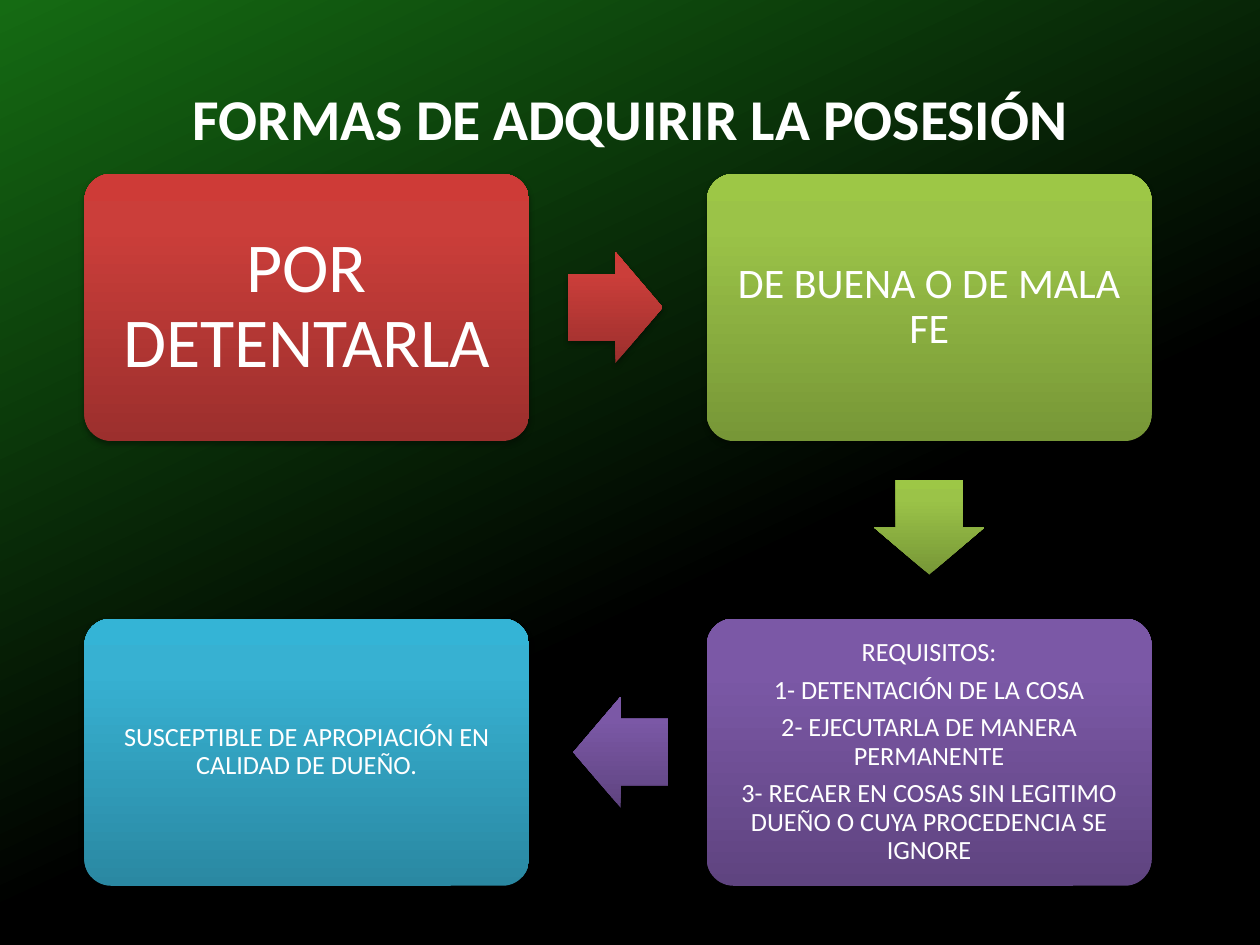
from lxml import etree
from pptx import Presentation
from pptx import util as u
from pptx.dml.color import RGBColor
from pptx.enum import shapes, text
from pptx.oxml import parse_xml
from pptx.oxml.ns import nsdecls, qn

TITLE = "FORMAS DE ADQUIRIR LA POSESIÓN"
STEPS = [
    ("red", 0, 0, 40, 0.17, ["POR DETENTARLA"]),
    ("green", 1, 0, 24, 0.1, ["DE BUENA O DE MALA FE"]),
    ("purple", 1, 1, 15, 0.06, [
        "REQUISITOS:",
        "1- DETENTACIÓN DE LA COSA",
        "2- EJECUTARLA DE MANERA PERMANENTE",
        "3- RECAER EN COSAS SIN LEGITIMO DUEÑO O CUYA PROCEDENCIA SE IGNORE",
    ]),
    ("blue", 0, 1, 15, 0.06, ["SUSCEPTIBLE DE APROPIACIÓN EN CALIDAD DE DUEÑO."]),
]
TURNS = [(0, 1, 0), (90, 0, 1), (180, -1, 0)]
COLORS = {
    "white": "FFFFFF",
    "shade": "000000",
    "back": [(40, "000000"), (100, "156B13")],
    "red": [(0, "9C2F2D"), (80, "CB3E3A"), (100, "CE3B37")],
    "green": [(0, "779737"), (80, "9BC348"), (100, "9DC746")],
    "purple": [(0, "5F4480"), (80, "7B58A6"), (100, "7C57A8")],
    "blue": [(0, "2A88A2"), (80, "37B1D2"), (100, "34B4D6")],
}
FONT = "Calibri"
LEFT, TOP = 0.67, 1.38
STEP_X, STEP_Y = 4.94, 3.53
BOX_W, BOX_H = 3.53, 2.12
ARROW_W, ARROW_H = 0.75, 0.88
PULL = 0.02


def blend(fill, root, name, angle):
    fill.solid()
    old = root.find(qn("a:solidFill"))
    stops = "".join(
        f'<a:gs pos="{pos * 1000}"><a:srgbClr val="{tone}"/></a:gs>'
        for pos, tone in COLORS[name])
    new = parse_xml(
        f'<a:gradFill {nsdecls("a")} rotWithShape="0"><a:gsLst>{stops}</a:gsLst>'
        f'<a:lin ang="{angle * 60000}" scaled="0"/></a:gradFill>')
    root.replace(old, new)


def style(runs, size, bold=False):
    for run in runs:
        run.font.name = FONT
        run.font.size = u.Pt(size)
        run.font.bold = bold
        run.font.color.rgb = RGBColor.from_string(COLORS["white"])


def block(slide, kind, mid, size, name, adjust):
    (x, y), (w, h) = mid, size
    shape = slide.shapes.add_shape(
        kind, *(u.Inches(v) for v in (x - w / 2, y - h / 2, w, h)))
    for i, value in enumerate(adjust):
        shape.adjustments[i] = value
    root = shape._element.spPr
    blend(shape.fill, root, name, 270)
    shape.line.fill.background()
    shape.shadow.inherit = False
    glow = etree.SubElement(
        root.find(qn("a:effectLst")), qn("a:outerShdw"),
        blurRad=str(u.Pt(3.1)), dist=str(u.Pt(1.8)), dir="5400000", rotWithShape="0")
    tone = etree.SubElement(glow, qn("a:srgbClr"), val=COLORS["shade"])
    etree.SubElement(tone, qn("a:alpha"), val="35000")
    return shape


def write(shape, lines, size, inset):
    frame = shape.text_frame
    frame.word_wrap = True
    frame.vertical_anchor = text.MSO_ANCHOR.MIDDLE
    frame.margin_left = frame.margin_right = u.Inches(inset)
    frame.margin_top = frame.margin_bottom = u.Inches(inset)
    frame.text = "\n".join(lines)
    for para in frame.paragraphs:
        para.alignment = text.PP_ALIGN.CENTER
        para.line_spacing = 0.9
        para.space_after = u.Pt(size * 0.35)
        style(para.runs, size)


def head(slide):
    title = slide.shapes.title
    title.left, title.top = u.Inches(1.39), u.Inches(0.6)
    title.width, title.height = u.Inches(7.23), u.Inches(0.66)
    frame = title.text_frame
    frame.text = TITLE
    frame.word_wrap = False
    frame.auto_size = text.MSO_AUTO_SIZE.SHAPE_TO_FIT_TEXT
    frame.vertical_anchor = text.MSO_ANCHOR.MIDDLE
    para = frame.paragraphs[0]
    para.alignment = text.PP_ALIGN.CENTER
    style(para.runs, 33, True)


def main():
    deck = Presentation()
    deck.slide_width, deck.slide_height = u.Inches(10), u.Inches(7.5)
    slide = deck.slides.add_slide(deck.slide_layouts[5])
    fill = slide.background.fill
    fill.solid()
    blend(fill, slide._element.xpath(".//p:bgPr")[0], "back", 245)
    head(slide)

    mids = [(LEFT + col * STEP_X + BOX_W / 2, TOP + row * STEP_Y + BOX_H / 2)
            for _, col, row, *_ in STEPS]
    for mid, (name, _, _, size, inset, lines) in zip(mids, STEPS):
        box = block(slide, shapes.MSO_SHAPE.ROUNDED_RECTANGLE, mid,
                    (BOX_W, BOX_H), name, [0.1])
        write(box, lines, size, inset)
    for a, b, step, (turn, dx, dy) in zip(mids, mids[1:], STEPS, TURNS):
        mid = ((a[0] + b[0]) / 2 - PULL * dx, (a[1] + b[1]) / 2 - PULL * dy)
        arrow = block(slide, shapes.MSO_SHAPE.RIGHT_ARROW, mid,
                      (ARROW_W, ARROW_H), step[0], [0.6, 0.5])
        arrow.rotation = turn
    deck.save("out.pptx")


if __name__ == "__main__":
    main()
